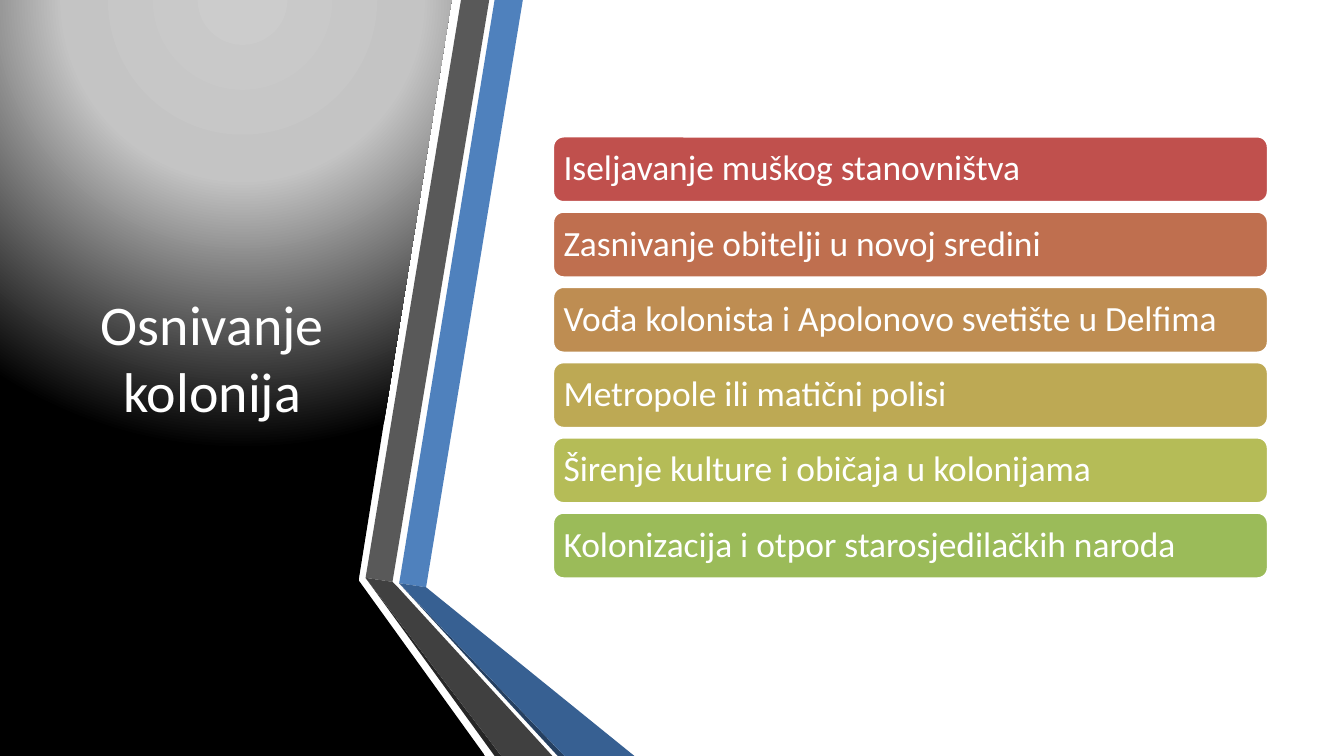
"""Build the slide on the founding of colonies."""
from dataclasses import dataclass
from typing import Any

import lxml.etree
import pptx
import pptx.dml.color
import pptx.enum.shapes
import pptx.enum.text
import pptx.oxml.ns
import pptx.util

PX = 4572
WIDTH, HEIGHT = 2000, 1125


@dataclass(frozen=True)
class Theme:
    font: str = "Calibri"
    white: str = "FFFFFF"
    blue: str = "4F81BD"
    blue_dark: str = "376092"
    blue_edge: str = "254061"
    gray: str = "595959"
    gray_dark: str = "404040"
    gray_edge: str = "262626"
    panel: tuple = ((0, "CCCCCC"), (40, "C4C4C4"), (100, "000000"))
    title_size: int = 30
    bar_size: int = 19
    bar_line: int = 2


@dataclass(frozen=True)
class Ribbon:
    color: str
    points: tuple


@dataclass(frozen=True)
class Bar:
    text: str
    color: str


T = Theme()
PANEL = ((528, 0), (672, 0), (534, 862), (534, 864), (722, HEIGHT), (0, HEIGHT), (0, 0))
RIBBONS = (
    Ribbon(T.blue, ((594, 868), (634, 874), (778, 0), (736, 0))),
    Ribbon(T.gray, ((728, 0), (686, 0), (544, 860), (584, 866))),
    Ribbon(T.gray_edge, ((544, 860), (736, HEIGHT), (746, HEIGHT))),
    Ribbon(T.blue_edge, ((594, 868), (830, HEIGHT), (840, HEIGHT))),
    Ribbon(T.blue_dark, ((594, 868), (840, HEIGHT), (944, HEIGHT), (634, 874))),
    Ribbon(T.gray_dark, ((822, HEIGHT), (592, 874), (584, 866), (544, 860), (746, HEIGHT))),
)
BARS = (
    Bar("Iseljavanje muškog stanovništva", "C0504D"),
    Bar("Zasnivanje obitelji u novoj sredini", "BF6F4F"),
    Bar("Vođa kolonista i Apolonovo svetište u Delfima", "BE8D52"),
    Bar("Metropole ili matični polisi", "BDA954"),
    Bar("Širenje kulture i običaja u kolonijama", "B5BC57"),
    Bar("Kolonizacija i otpor starosjedilačkih naroda", "9BBB59"),
)
BAR_LEFT, BAR_TOP, BAR_WIDTH, BAR_HEIGHT, BAR_PITCH = 822, 202, 1066, 100, 112


def rgb(color: str) -> pptx.dml.color.RGBColor:
    return pptx.dml.color.RGBColor.from_string(color)


def box(*lengths: int) -> list[int]:
    return [n * PX for n in lengths]


def apply(target: Any, values: dict[str, Any]) -> None:
    for name, value in values.items():
        setattr(target, name, value)


def paint(sp: Any, color: str) -> None:
    sp.shadow.inherit = False
    sp.fill.solid()
    sp.fill.fore_color.rgb = rgb(color)


def polygon(s: Any, points: tuple) -> Any:
    builder = s.shapes.build_freeform(*points[0], scale=PX)
    builder.add_line_segments(points[1:], close=True)
    sp = builder.convert_to_shape()
    sp.shadow.inherit = False
    sp.line.fill.background()
    return sp


def radial(sp: Any, stops: tuple) -> None:
    sp.fill.gradient()
    grad = sp.element.spPr.find(pptx.oxml.ns.qn("a:gradFill"))
    for child in list(grad):
        grad.remove(child)

    def add(parent: Any, tag: str, **attributes: str) -> Any:
        return lxml.etree.SubElement(parent, pptx.oxml.ns.qn(tag), attributes)

    stop_list = add(grad, "a:gsLst")
    for position, color in stops:
        stop = add(stop_list, "a:gs", pos=str(position * 1000))
        add(stop, "a:srgbClr", val=color)
    path = add(grad, "a:path", path="circle")
    add(path, "a:fillToRect", l="50000", t="-80000", r="50000", b="180000")


def write(sp: Any, text: str, size: int, inset: int, paragraph: dict[str, Any]) -> None:
    tf = sp.text_frame
    apply(tf, {"word_wrap": True, "vertical_anchor": pptx.enum.text.MSO_ANCHOR.MIDDLE})
    sides = ("margin_left", "margin_top", "margin_right", "margin_bottom")
    apply(tf, dict.fromkeys(sides, inset * PX))
    p = tf.paragraphs[0]
    apply(p, paragraph)
    r = p.add_run()
    r.text = text
    apply(r.font, {"name": T.font, "size": pptx.util.Pt(size)})
    r.font.color.rgb = rgb(T.white)


def draw_bar(s: Any, bar: Bar, top: int) -> None:
    sp = s.shapes.add_shape(
        pptx.enum.shapes.MSO_SHAPE.ROUNDED_RECTANGLE, *box(BAR_LEFT, top, BAR_WIDTH, BAR_HEIGHT)
    )
    paint(sp, bar.color)
    sp.line.color.rgb = rgb(T.white)
    sp.line.width = pptx.util.Pt(T.bar_line)
    write(sp, bar.text, T.bar_size, 12,
          {"alignment": pptx.enum.text.PP_ALIGN.LEFT, "line_spacing": 0.9})


def main() -> None:
    prs = pptx.Presentation()
    apply(prs, {"slide_width": WIDTH * PX, "slide_height": HEIGHT * PX})
    s = prs.slides.add_slide(prs.slide_layouts[6])
    radial(polygon(s, PANEL), T.panel)
    for ribbon in RIBBONS:
        paint(polygon(s, ribbon.points), ribbon.color)
    title = s.shapes.add_textbox(*box(88, 112, 456, 838))
    write(title, "Osnivanje kolonija", T.title_size, 20,
          {"alignment": pptx.enum.text.PP_ALIGN.CENTER})
    for i, bar in enumerate(BARS):
        draw_bar(s, bar, BAR_TOP + i * BAR_PITCH)
    prs.save("out.pptx")


if __name__ == "__main__":
    main()
